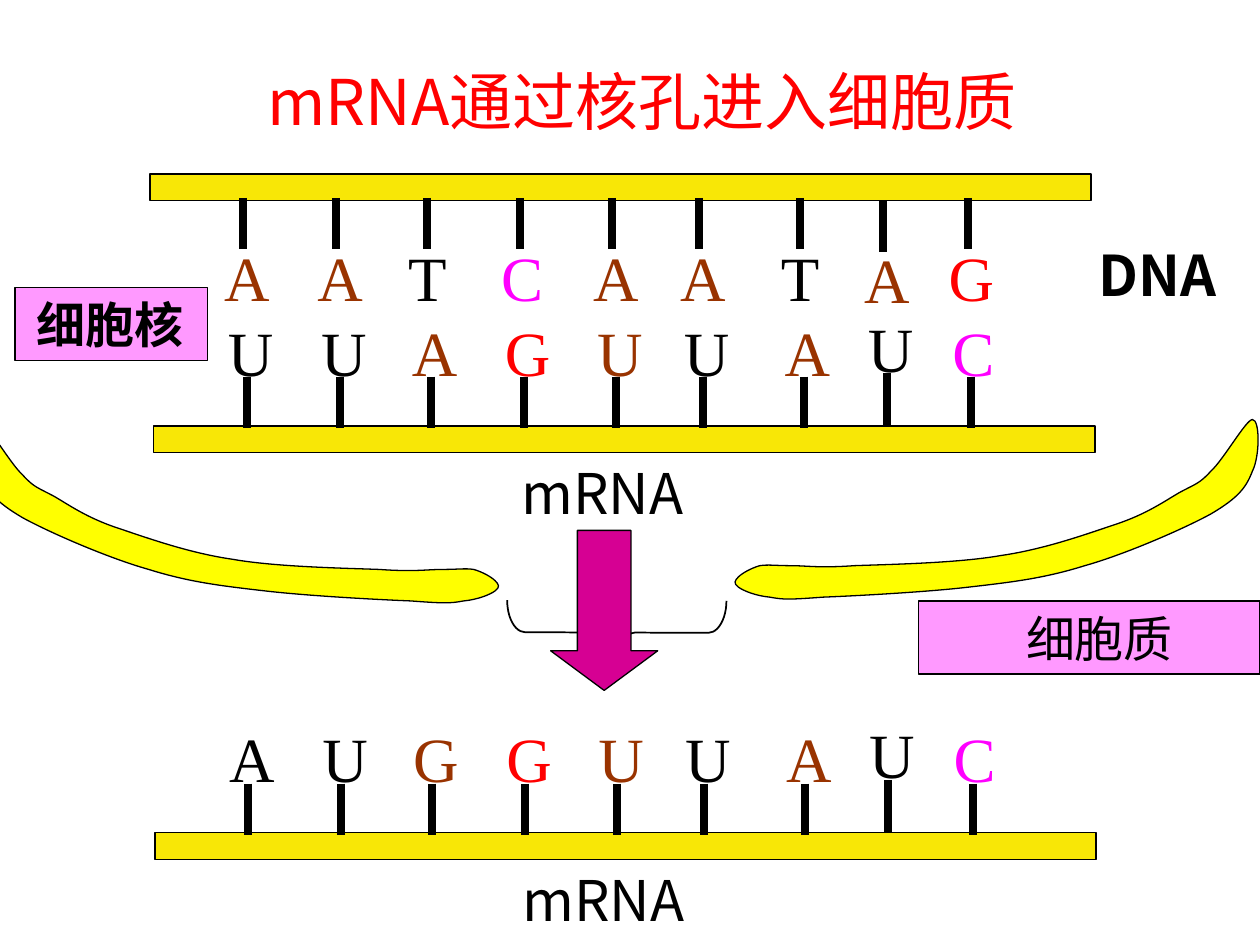
import pptx
import pptx.util
import pptx.dml.color
import pptx.enum.shapes
import pptx.enum.text
import pptx.oxml.ns
from lxml import etree

Inches, Pt = pptx.util.Inches, pptx.util.Pt
SHAPE = pptx.enum.shapes.MSO_SHAPE
ALIGN = pptx.enum.text.PP_ALIGN
ANCHOR = pptx.enum.text.MSO_ANCHOR
qn = pptx.oxml.ns.qn

SERIF, SANS = "Times New Roman", "Noto Sans CJK SC"
COLORS = {
    "black": "000000", "brown": "993300", "red": "FF0000", "magenta": "FF00FF",
    "bar": "F8E706", "label": "FF99FF", "membrane": "FFFF00", "arrow": "D60093",
}
CODES = {"K": "black", "B": "brown", "R": "red", "M": "magenta"}

# Content: bases, their colour codes, and the heights of each strand's parts
STEM_X = [1.93, 2.67, 3.39, 4.13, 4.86, 5.55, 6.35, 7.01, 7.68]
STEM, RAISED = 0.41, 7  # stem length; index of the base set off from its row
DNA = dict(bases="AATCAATAG", codes="BBKMBBKBR", shift=0,
           bar=1.38, letters=1.84, stem=1.57, nudge=0.02)
MRNA = dict(bases="UUAGUUAUC", codes="KKBRBKBKM", shift=0.03,
            bar=3.38, letters=2.44, stem=2.99, nudge=-0.03, caption=3.59)
MRNA_OUT = dict(bases="AUGGUUAUC", codes="KKBRBKBKM", shift=0.04,
                bar=6.61, letters=5.66, stem=6.22, nudge=-0.03, caption=6.82)

# Nuclear membrane: start point, then control, control, end of each curve
MEMBRANE = [
    (9.94, 3.33),
    (10, 3.33), (10, 3.62), (9.94, 3.74),
    (9.89, 3.87), (9.83, 3.95), (9.61, 4.08),
    (9.39, 4.2), (8.93, 4.4), (8.61, 4.49),
    (8.29, 4.59), (8.04, 4.62), (7.69, 4.66),
    (7.35, 4.7), (6.79, 4.73), (6.53, 4.74),
    (6.26, 4.76), (6.22, 4.76), (6.11, 4.74),
    (6, 4.73), (5.9, 4.69), (5.86, 4.66),
    (5.82, 4.63), (5.83, 4.61), (5.86, 4.58),
    (5.89, 4.55), (5.96, 4.51), (6.03, 4.49),
    (6.1, 4.48), (6.15, 4.49), (6.28, 4.49),
    (6.4, 4.49), (6.5, 4.51), (6.78, 4.49),
    (7.06, 4.48), (7.6, 4.47), (7.94, 4.41),
    (8.29, 4.36), (8.62, 4.24), (8.86, 4.16),
    (9.1, 4.08), (9.24, 3.98), (9.36, 3.91),
    (9.49, 3.84), (9.52, 3.84), (9.61, 3.74),
    (9.71, 3.65), (9.89, 3.33), (9.94, 3.33),
]


def rgb(name):
    return pptx.dml.color.RGBColor.from_string(COLORS[name])


def paint(s, fill=None, width=0.75):
    s.shadow.inherit = False
    if fill:
        s.fill.solid()
        s.fill.fore_color.rgb = rgb(fill)
    else:
        s.fill.background()
    s.line.color.rgb = rgb("black")
    s.line.width = Pt(width)


def add_preset(shapes, kind, box, fill=None, width=0.75):
    s = shapes.add_shape(kind, *map(Inches, box))
    paint(s, fill, width)
    return s


def write(s, text, size, font=SANS, color="black", bold=False,
          align=ALIGN.LEFT, **frame):
    tf = s.text_frame
    layout = dict(word_wrap=True, vertical_anchor=ANCHOR.MIDDLE,
                  margin_left=Inches(0.1))
    for name, value in {**layout, **frame}.items():
        setattr(tf, name, value)
    p = tf.paragraphs[0]
    p.alignment = align
    r = p.add_run()
    r.text = text
    for name, value in dict(size=Pt(size), name=font, bold=bold).items():
        setattr(r.font, name, value)
    r.font.color.rgb = rgb(color)
    etree.SubElement(r.font._element, qn("a:ea")).set("typeface", font)


def add_text(shapes, box, text, size, **style):
    write(shapes.add_textbox(*map(Inches, box)), text, size, **style)


def add_stem(shapes, x, y):
    s = shapes.add_connector(pptx.enum.shapes.MSO_CONNECTOR.STRAIGHT,
                             *map(Inches, (x, y, x, y + STEM)))
    s.line.color.rgb = rgb("black")
    s.line.width = Pt(4.5)
    etree.SubElement(s._element.spPr, qn("a:effectLst"))


def add_strand(shapes, strand):
    shapes = shapes.add_group_shape().shapes
    shift = strand["shift"]
    add_preset(shapes, SHAPE.RECTANGLE, (1.19 + shift, strand["bar"], 7.47, 0.21), "bar")
    for i, (x, base, code) in enumerate(zip(STEM_X, strand["bases"], strand["codes"])):
        x += shift
        dy = strand["nudge"] if i == RAISED else 0
        add_text(shapes, (x - 0.25, strand["letters"] + dy, 0.66, 0.69), base, 36,
                 font=SERIF, color=CODES[code], vertical_anchor=ANCHOR.TOP)
        add_stem(shapes, x, strand["stem"] + dy)
    if "caption" in strand:
        add_text(shapes, (3.88 + shift, strand["caption"], 1.74, 0.63), "mRNA", 32,
                 align=ALIGN.CENTER)


def add_membrane(shapes, points):
    points = [(Inches(x), Inches(y)) for x, y in points]
    builder = shapes.build_freeform(*points[0])
    builder.add_line_segments(points[1:], close=True)
    s = builder.convert_to_shape()
    paint(s, "membrane")
    # Merge every three segments into one Bezier curve
    segments = list(s._element.iter(qn("a:lnTo")))
    for i in range(0, len(segments), 3):
        curve = etree.Element(qn("a:cubicBezTo"))
        segments[i].addprevious(curve)
        for segment in segments[i:i + 3]:
            curve.append(segment[0])
            segment.getparent().remove(segment)


def main():
    prs = pptx.Presentation()
    prs.slide_width, prs.slide_height = Inches(10), Inches(7.5)
    shapes = prs.slides.add_slide(prs.slide_layouts[6]).shapes

    # Transcription inside the nucleus
    add_strand(shapes, DNA)
    add_strand(shapes, MRNA)

    # Compartment labels
    s = add_preset(shapes, SHAPE.RECTANGLE, (7.29, 4.77, 2.71, 0.58), "label")
    write(s, "细胞质", 28, align=ALIGN.CENTER, margin_left=Inches(0.26))
    s = add_preset(shapes, SHAPE.RECTANGLE, (0.12, 2.28, 1.53, 0.58), "label")
    write(s, "细胞核", 28, bold=True, margin_left=Inches(0.17))

    # Right membrane and the pore
    add_membrane(shapes, MEMBRANE)
    s = add_preset(shapes, SHAPE.LEFT_BRACE, (4.64, 4.15, 0.51, 1.74), width=1)
    s.rotation = 270.2
    s.adjustments[0] = 0.28

    # Title and DNA label
    add_text(shapes, (8.62, 1.86, 1.34, 0.63), "DNA", 32, bold=True)
    add_text(shapes, (1.93, 0.45, 6.33, 0.69), "mRNA通过核孔进入细胞质", 36,
             color="red", align=ALIGN.CENTER)

    # mRNA in the cytoplasm, and the arrow through the pore
    add_strand(shapes, MRNA_OUT)
    s = add_preset(shapes, SHAPE.DOWN_ARROW, (4.37, 4.21, 0.85, 1.27), "arrow")
    s.adjustments[0], s.adjustments[1] = 0.5, 0.37

    # Left membrane mirrors the right one
    add_membrane(shapes, [(9.79 - x, y + 0.03) for x, y in MEMBRANE])

    prs.save("out.pptx")


if __name__ == "__main__":
    main()
